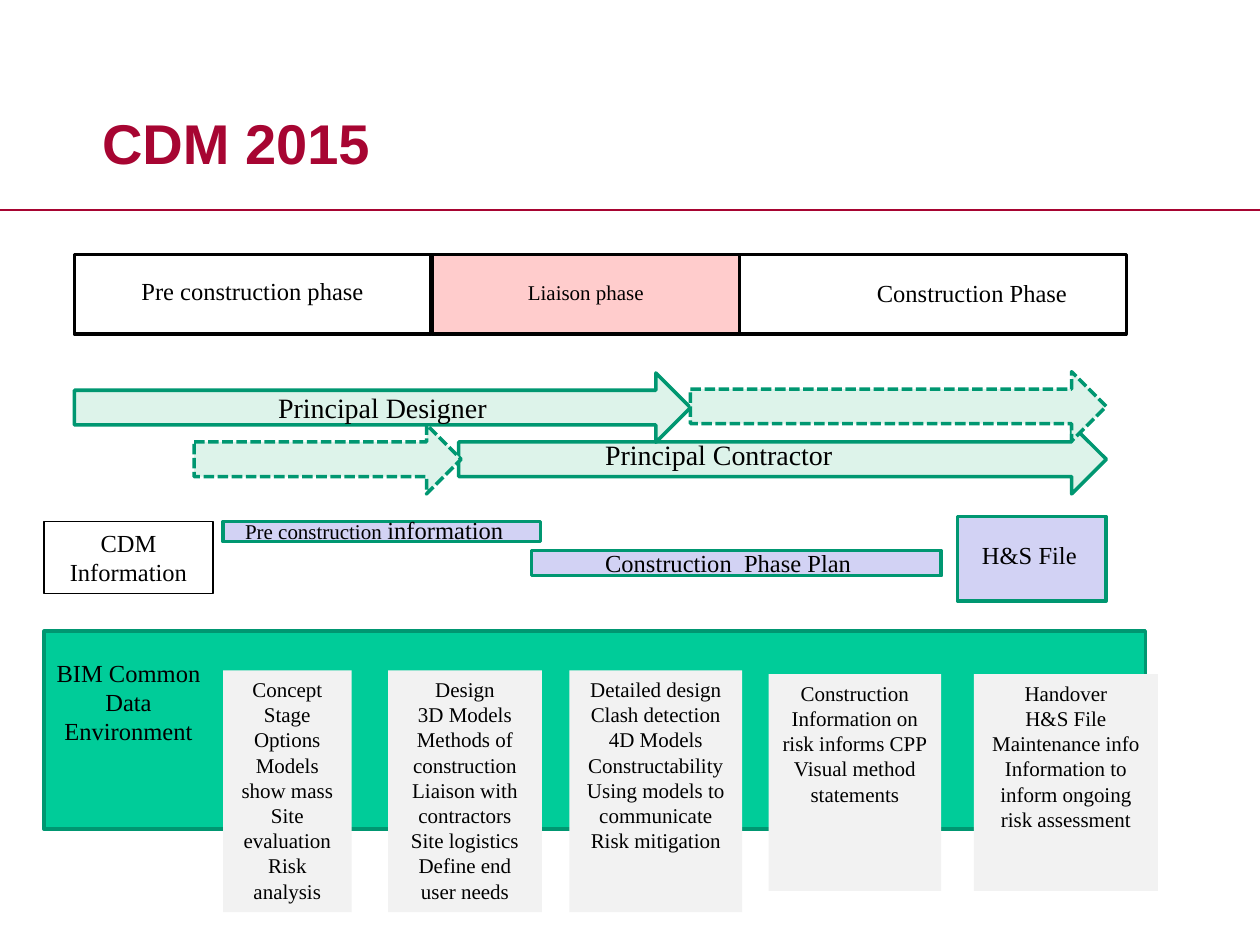
"""Build the CDM 2015 phases and information slide."""
from pptx import Presentation
from pptx.dml.color import RGBColor
from pptx.enum.dml import MSO_LINE
from pptx.enum.shapes import MSO_CONNECTOR, MSO_SHAPE
from pptx.enum.text import MSO_ANCHOR, PP_ALIGN
from pptx.oxml.ns import qn
from pptx.util import Pt
from lxml import etree

RECTANGLE = MSO_SHAPE.RECTANGLE
ARROW = MSO_SHAPE.RIGHT_ARROW
STRAIGHT = MSO_CONNECTOR.STRAIGHT
DASH = MSO_LINE.SQUARE_DOT
TOP, MIDDLE = MSO_ANCHOR.TOP, MSO_ANCHOR.MIDDLE
LEFT, CENTER = PP_ALIGN.LEFT, PP_ALIGN.CENTER

CRIMSON = RGBColor(0xA7, 0x05, 0x32)
BLACK = RGBColor(0x00, 0x00, 0x00)
PINK = RGBColor(0xFF, 0xCC, 0xCC)
MINT = RGBColor(0xDD, 0xF3, 0xEA)
GREEN = RGBColor(0x00, 0x97, 0x71)
LILAC = RGBColor(0xD2, 0xD2, 0xF4)
EMERALD = RGBColor(0x00, 0xCC, 0x99)
GREY = RGBColor(0xF2, 0xF2, 0xF2)

EMU_PER_PX = 9144
SLIDE_WIDTH, SLIDE_HEIGHT = 1000, 750


def px(*lengths):
    """Turn whole px lengths into EMU."""
    return [length * EMU_PER_PX for length in lengths]


class SlideBuilder:
    """Hold the text style and the slide being filled."""

    text_style = {"name": "Times New Roman", "bold": False}
    title_style = {"name": "Arial", "size": Pt(32), "bold": True}

    def __init__(self, deck):
        self.slide = deck.slides.add_slide(deck.slide_layouts[5])

    def style_font(self, font, style, color):
        for name, value in style.items():
            setattr(font, name, value)
        font.color.rgb = color

    def title(self, text, left, top, width, height):
        holder = self.slide.shapes.title
        holder.left, holder.top, holder.width, holder.height = px(left, top, width, height)
        holder.text_frame.text = text
        holder.text_frame.vertical_anchor = MIDDLE
        para = holder.text_frame.paragraphs[0]
        para.alignment = LEFT
        self.style_font(para.runs[0].font, self.title_style, CRIMSON)

    def rule(self, top):
        line = self.slide.shapes.add_connector(STRAIGHT, *px(0, top, SLIDE_WIDTH, top))
        line.line.color.rgb = CRIMSON
        line.line.width = Pt(1.25)
        etree.SubElement(line.element.spPr, qn("a:effectLst"))

    def fill_text(self, shape, paragraphs):
        """Fill a shape with centred paragraphs, each a list of (text, size) spans."""
        frame = shape.text_frame
        frame.word_wrap = True
        frame.vertical_anchor = TOP
        for index, spans in enumerate(paragraphs):
            para = frame.add_paragraph() if index else frame.paragraphs[0]
            para.alignment = CENTER
            for text, size in spans:
                span = para.add_run()
                span.text = text
                self.style_font(span.font, {**self.text_style, "size": Pt(size)}, BLACK)

    def shape(self, kind, bounds, fill=None, line=None, weight=2, dash=None):
        shape = self.slide.shapes.add_shape(kind, *px(*bounds))
        shape.shadow.inherit = False
        if fill is None:
            shape.fill.background()
        else:
            shape.fill.solid()
            shape.fill.fore_color.rgb = fill
        if line is None:
            shape.line.fill.background()
        else:
            shape.line.color.rgb = line
            shape.line.width = Pt(weight)
            if dash is not None:
                shape.line.dash_style = dash
        return shape

    def label(self, bounds, *spans):
        self.fill_text(self.slide.shapes.add_textbox(*px(*bounds)), [spans])

    def card(self, bounds, lines, size=12, **look):
        box = self.shape(RECTANGLE, bounds, **look)
        self.fill_text(box, [[(line, size)] for line in lines])


def main():
    deck = Presentation()
    deck.slide_width, deck.slide_height = px(SLIDE_WIDTH, SLIDE_HEIGHT)
    page = SlideBuilder(deck)
    page.title("CDM 2015", 71, 66, 747, 93)
    page.rule(167)

    for left, width, fill in ((59, 283, None), (343, 244, PINK), (587, 307, None)):
        page.shape(RECTANGLE, (left, 202, width, 63), fill, BLACK)
    page.label((94, 214, 213, 34), ("Pre construction phase", 14))
    page.label((610, 216, 323, 34), ("Construction Phase", 14))
    page.label((402, 217, 126, 30), ("Liaison phase", 12))

    for left, top, width, dash in (
        (364, 337, 514, None),
        (59, 296, 489, None),
        (548, 295, 330, DASH),
        (154, 337, 212, DASH),
    ):
        page.shape(ARROW, (left, top, width, 55), MINT, GREEN, dash=dash)
    page.label((154, 305, 299, 37), ("Principal Designer", 16))
    page.label((421, 342, 299, 37), ("Principal Contractor", 16))

    page.card((35, 414, 134, 57), ("CDM", "Information"), 14, line=BLACK, weight=0.75)
    for bounds in ((177, 414, 252, 16), (422, 437, 325, 20), (760, 410, 118, 67)):
        page.shape(RECTANGLE, bounds, LILAC, GREEN)
    page.label((760, 424, 114, 34), ("H&S File", 14))
    page.label((452, 430, 252, 34), ("Construction  Phase Plan", 14))
    page.label((181, 404, 232, 34), ("Pre construction ", 12), ("information", 14))

    page.shape(RECTANGLE, (35, 501, 874, 157), EMERALD, GREEN)
    page.label((35, 517, 134, 104), ("BIM Common Data Environment", 14))
    cards = (
        ((177, 532, 102, 192),
         ("Concept Stage", "Options", "Models show mass", "Site evaluation", "Risk analysis")),
        ((308, 532, 122, 192),
         ("Design", "3D Models", "Methods of construction", "Liaison with contractors",
          "Site logistics", "Define end user needs")),
        ((452, 532, 137, 192),
         ("Detailed design", "Clash detection", "4D Models", "Constructability",
          "Using models to communicate", "Risk mitigation")),
        ((610, 535, 137, 172),
         ("Construction", "Information on risk informs CPP", "Visual method statements")),
        ((773, 535, 146, 172),
         ("Handover", "H&S File", "Maintenance info",
          "Information to inform ongoing risk assessment")),
    )
    for bounds, lines in cards:
        page.card(bounds, lines, fill=GREY)

    deck.save("out.pptx")


if __name__ == "__main__":
    main()
